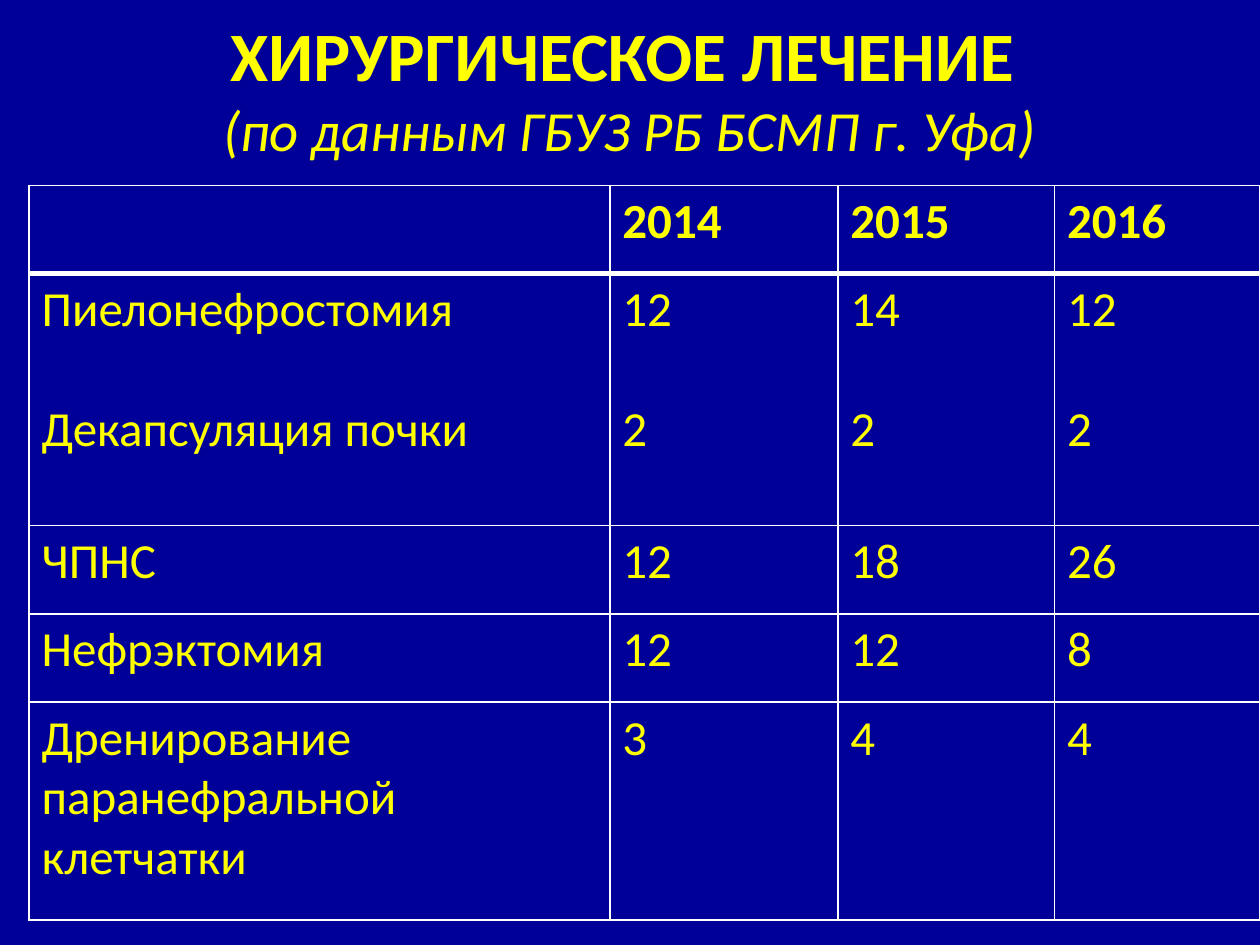
"""Build a slide with a table of surgical treatments by year."""
from dataclasses import dataclass

from lxml import etree
from pptx import Presentation
from pptx.dml.color import RGBColor
from pptx.enum import text
from pptx.oxml import ns
from pptx.util import Pt

NAVY, YELLOW, WHITE = "000099", "FFFF00", "FFFFFF"
FONT = "Calibri"
COLUMN_WIDTHS = (331.9, 130.3, 123.8, 117.4)
GAP_BEFORE_SECOND_LINE = 34.2


@dataclass(frozen=True)
class TreatmentRow:
    height: float
    cells: tuple[tuple[str, ...], ...]
    bold: bool = False
    top: float = 1
    bottom: float = 1


ROWS = (
    TreatmentRow(50.4, ((), ("2014",), ("2015",), ("2016",)), bold=True, bottom=3),
    TreatmentRow(144, (("Пиелонефростомия", "Декапсуляция почки"),
                       ("12", "2"), ("14", "2"), ("12", "2")), top=3),
    TreatmentRow(50.4, (("ЧПНС",), ("12",), ("18",), ("26",))),
    TreatmentRow(50.4, (("Нефрэктомия",), ("12",), ("12",), ("8",))),
    TreatmentRow(124.6, (("Дренирование паранефральной клетчатки",),
                         ("3",), ("4",), ("4",))),
)


def paint(target, color: str) -> None:
    """Give a fill a solid colour."""
    target.solid()
    target.fore_color.rgb = RGBColor.from_string(color)


def add_span(para, words: str, size: float, bold: bool = False, italic: bool = False) -> None:
    """Add one formatted run to a paragraph."""
    span = para.add_run()
    span.text = words
    span.font.name = FONT
    span.font.size = Pt(size)
    span.font.bold = bold
    span.font.italic = italic
    paint(span.font.fill, YELLOW)


def draw_borders(cell, top: float, bottom: float) -> None:
    """Outline a table cell in white."""
    properties = cell._tc.get_or_add_tcPr()
    edges = (("L", 1), ("R", 1), ("T", top), ("B", bottom))
    for position, (side, width) in enumerate(edges):
        line = etree.Element(ns.qn(f"a:ln{side}"), w=str(Pt(width)))
        fill = etree.SubElement(line, ns.qn("a:solidFill"))
        etree.SubElement(fill, ns.qn("a:srgbClr"), val=WHITE)
        properties.insert(position, line)


def fill_cell(cell, lines: tuple[str, ...], row: TreatmentRow) -> None:
    """Write the lines of a cell and style it."""
    cell.fill.background()
    draw_borders(cell, row.top, row.bottom)
    frame = cell.text_frame
    for index, words in enumerate(lines):
        para = frame.add_paragraph() if index else frame.paragraphs[0]
        para.space_before = Pt(GAP_BEFORE_SECOND_LINE if index else 0)
        add_span(para, words, 28, bold=row.bold)


def add_title(page) -> None:
    """Place and format the title."""
    title = page.shapes.title
    title.left, title.top, title.width, title.height = Pt(54), Pt(0), Pt(612), Pt(100)
    frame = title.text_frame
    frame.word_wrap = True
    frame.auto_size = text.MSO_AUTO_SIZE.NONE
    frame.vertical_anchor = text.MSO_ANCHOR.MIDDLE
    para = frame.paragraphs[0]
    para.alignment = text.PP_ALIGN.CENTER
    add_span(para, "ХИРУРГИЧЕСКОЕ ЛЕЧЕНИЕ ", 39.6, bold=True)
    para.add_line_break()
    add_span(para, "(по данным ГБУЗ РБ БСМП г. Уфа)", 32.4, italic=True)


def add_treatments(page) -> None:
    """Add the table of treatments."""
    frame = page.shapes.add_table(
        len(ROWS), len(COLUMN_WIDTHS), Pt(16.6), Pt(106),
        Pt(sum(COLUMN_WIDTHS)), Pt(sum(row.height for row in ROWS)))
    table = frame.table
    for column, width in zip(table.columns, COLUMN_WIDTHS):
        column.width = Pt(width)
    for table_row, row in zip(table.rows, ROWS):
        table_row.height = Pt(row.height)
        for cell, lines in zip(table_row.cells, row.cells):
            fill_cell(cell, lines, row)


def main() -> None:
    """Build and save the deck."""
    deck = Presentation()
    deck.slide_width, deck.slide_height = Pt(720), Pt(540)
    page = deck.slides.add_slide(deck.slide_layouts[5])
    paint(page.background.fill, NAVY)
    add_title(page)
    add_treatments(page)
    deck.save("out.pptx")


if __name__ == "__main__":
    main()
